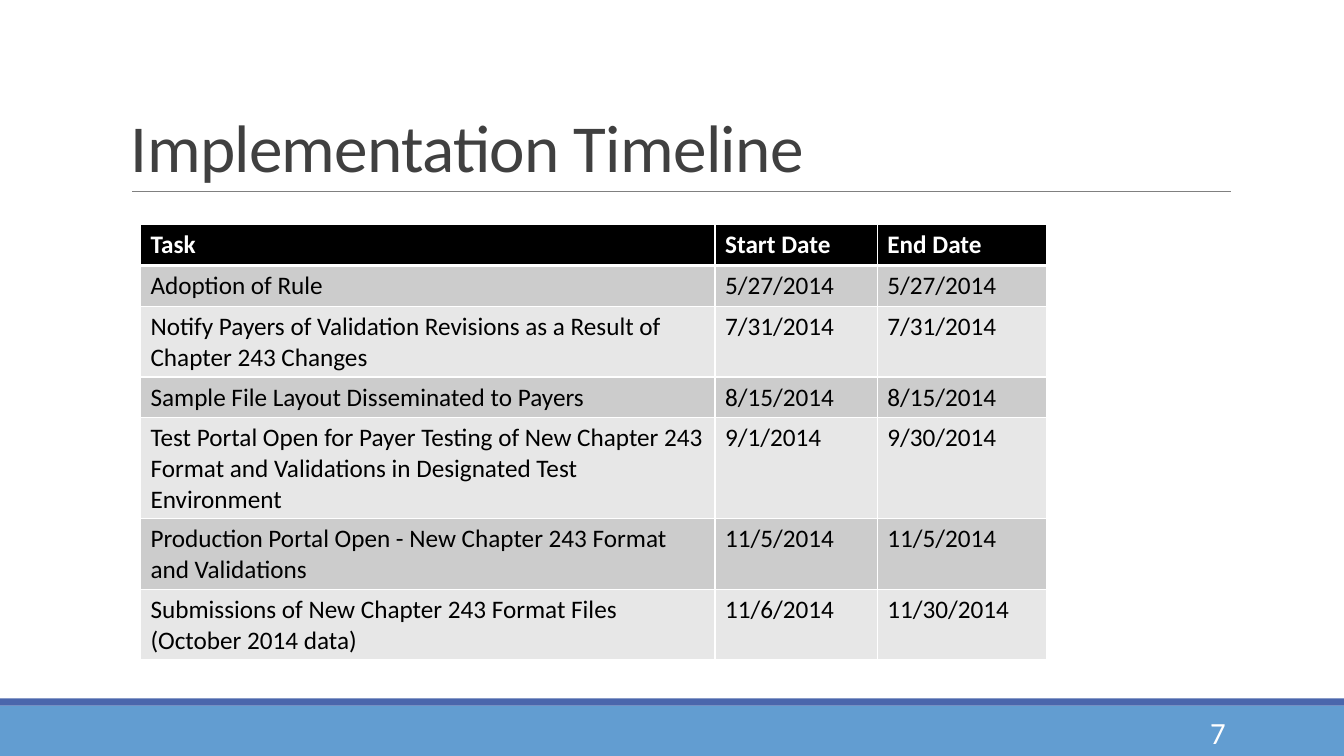
from lxml import etree
from pptx import Presentation
from pptx import util as u
from pptx.dml.color import RGBColor
from pptx.enum import shapes, text
from pptx.oxml.ns import qn

WIDTH, HEIGHT = u.Cm(33.87), u.Cm(19.05)
COLUMN_WIDTHS = (14.48, 4.09, 4.27)
ROW_HEIGHT = 1.03
TIMELINE = [
    ("Task", "Start Date", "End Date"),
    ("Adoption of Rule", "5/27/2014", "5/27/2014"),
    ("Notify Payers of Validation Revisions as a Result of Chapter 243 Changes",
     "7/31/2014", "7/31/2014"),
    ("Sample File Layout Disseminated to Payers", "8/15/2014", "8/15/2014"),
    ("Test Portal Open for Payer Testing of New Chapter 243 Format and "
     "Validations in Designated Test Environment", "9/1/2014", "9/30/2014"),
    ("Production Portal Open - New Chapter 243 Format and Validations",
     "11/5/2014", "11/5/2014"),
    ("Submissions of New Chapter 243 Format Files (October 2014 data)",
     "11/6/2014", "11/30/2014"),
]


def color(value):
    return RGBColor.from_string(value)


def write(frame, words, size, ink, bold=False, **paragraph_format):
    """Fill a text frame with one formatted run and return that run."""
    paragraph = frame.paragraphs[0]
    for name, value in paragraph_format.items():
        setattr(paragraph, name, value)
    run = paragraph.add_run()
    run.text = words
    for name, value in {"name": "Calibri", "size": u.Pt(size), "bold": bold}.items():
        setattr(run.font, name, value)
    run.font.color.rgb = color(ink)
    return run


def add_text_box(slide, box, anchor):
    frame = slide.shapes.add_textbox(*box).text_frame
    for name, value in {"word_wrap": True, "vertical_anchor": anchor,
                        "margin_top": u.Cm(0.13), "margin_bottom": u.Cm(0.13)}.items():
        setattr(frame, name, value)
    return frame


def add_bar(slide, box, fill):
    bar = slide.shapes.add_shape(shapes.MSO_SHAPE.RECTANGLE, *box)
    bar.shadow.inherit = False
    bar.fill.solid()
    bar.fill.fore_color.rgb = color(fill)
    bar.line.fill.background()


def add_heading(slide, left, top, width, height):
    # Title sitting on the rule
    frame = add_text_box(slide, (left, top, width, height), text.MSO_ANCHOR.BOTTOM)
    title = write(frame, "Implementation Timeline", 48, "404040", line_spacing=0.85)
    title.font._element.set("spc", "-50")

    # Thin rule along the bottom of the heading
    bottom = top + height
    start = left + u.Cm(0.28)
    rule = slide.shapes.add_connector(
        shapes.MSO_CONNECTOR.STRAIGHT, start, bottom, start + u.Cm(27.68), bottom)
    rule.line.color.rgb = color("808080")
    rule.line.width = u.Pt(0.5)
    etree.SubElement(rule._element.spPr, qn("a:effectLst"))


def add_borders(cell, bottom_width):
    properties = cell._tc.get_or_add_tcPr()
    widths = {"a:lnL": 1, "a:lnR": 1, "a:lnT": 1, "a:lnB": bottom_width}
    for position, (side, width) in enumerate(widths.items()):
        border = etree.Element(qn(side), w=str(u.Pt(width)))
        fill = etree.SubElement(border, qn("a:solidFill"))
        etree.SubElement(fill, qn("a:srgbClr"), val="FFFFFF")
        properties.insert(position, border)


def add_timeline(slide, left, top, width, height):
    frame = slide.shapes.add_table(
        len(TIMELINE), len(COLUMN_WIDTHS), left, top, width, height)
    table = frame.table
    for column, column_width in zip(table.columns, COLUMN_WIDTHS):
        column.width = u.Cm(column_width)
    for index, entries in enumerate(TIMELINE):
        table.rows[index].height = u.Cm(ROW_HEIGHT)
        header = index == 0
        band = "000000" if header else ("E7E7E7", "CCCCCC")[index % 2]
        for cell, entry in zip(table.rows[index].cells, entries):
            cell.fill.solid()
            cell.fill.fore_color.rgb = color(band)
            add_borders(cell, 3 if header else 1)
            write(cell.text_frame, entry, 18, "FFFFFF" if header else "000000", header)
    frame.height = height


def add_footer(slide, left, top, width, height):
    # Dark strip above the light band
    strip = u.Cm(0.18)
    add_bar(slide, (left, top + strip, width, height - strip), "629DD1")
    add_bar(slide, (left, top, width, strip), "4A66AC")

    # Page number
    number_box = (left + u.Cm(27.51), top + u.Cm(0.33), u.Cm(3.63), u.Cm(1.02))
    frame = add_text_box(slide, number_box, text.MSO_ANCHOR.MIDDLE)
    write(frame, "7", 22, "FFFFFF", alignment=text.PP_ALIGN.RIGHT)


def main():
    deck = Presentation()
    deck.slide_width, deck.slide_height = WIDTH, HEIGHT
    slide = deck.slides.add_slide(deck.slide_layouts[6])
    footer_height = u.Cm(1.45)
    add_footer(slide, 0, HEIGHT - footer_height, WIDTH, footer_height)
    add_heading(slide, u.Cm(3.05), u.Cm(0.79), u.Cm(28.09), u.Cm(4.04))
    add_timeline(slide, u.Cm(3.54), u.Cm(5.66), u.Cm(sum(COLUMN_WIDTHS)), u.Cm(10.97))
    deck.save("out.pptx")


if __name__ == "__main__":
    main()
